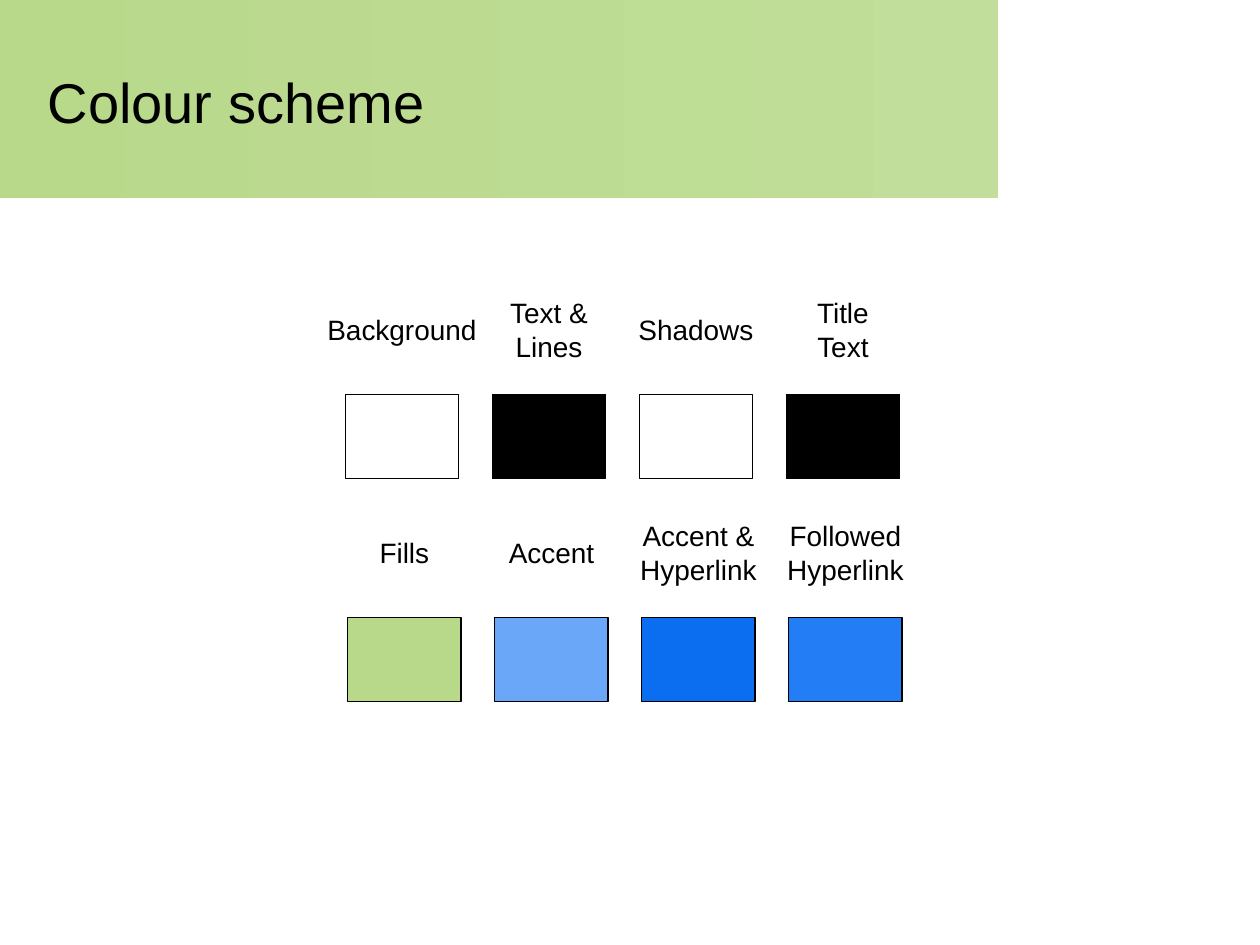
from dataclasses import dataclass

from pptx import Presentation
from pptx import util as u
from pptx.dml.color import RGBColor
from pptx.enum import shapes, text


@dataclass(frozen=True)
class Theme:
    font: str = "Arial"
    ink: str = "000000"
    paper: str = "FFFFFF"
    green: str = "B8D98A"
    pale_green: str = "C1DE9A"
    sky: str = "6BA7F8"
    blue: str = "0B6DEF"
    bright_blue: str = "237DF5"
    title_size: int = 32
    label_size: int = 16
    line_width: float = 0.75


@dataclass(frozen=True)
class Swatch:
    label: str
    color: str
    label_width: float


@dataclass(frozen=True)
class Grid:
    left: float = 3.19
    right: float = 6.69
    columns: int = 4
    top: float = 3.13
    row_pitch: float = 1.77
    row_shift: float = 0.02
    swatch_width: float = 0.9
    swatch_height: float = 0.67
    label_rise: float = 0.51
    line_height: float = 0.27
    label_padding: float = 0.1

    def center(self, col: int, row: int) -> float:
        pitch = (self.right - self.left) / (self.columns - 1)
        return self.left + col * pitch + row * self.row_shift

    def row_top(self, row: int) -> float:
        return self.top + row * self.row_pitch


THEME = Theme()
GRID = Grid()
WIDTH, HEIGHT = 10, 7.5
ROWS = (
    (
        Swatch("Background", THEME.paper, 1.4),
        Swatch("Text &\nLines", THEME.ink, 0.85),
        Swatch("Shadows", THEME.paper, 1.13),
        Swatch("Title\vText", THEME.ink, 0.65),
    ),
    (
        Swatch("Fills", THEME.green, 0.63),
        Swatch("Accent", THEME.sky, 0.9),
        Swatch("Accent &\nHyperlink", THEME.blue, 1.16),
        Swatch("Followed\nHyperlink", THEME.bright_blue, 1.16),
    ),
)


def rgb(color: str) -> RGBColor:
    return RGBColor.from_string(color)


def add_rect(s, left: float, top: float, width: float, height: float):
    box = (u.Inches(v) for v in (left, top, width, height))
    sp = s.shapes.add_shape(shapes.MSO_SHAPE.RECTANGLE, *box)
    sp.shadow.inherit = False
    return sp


def add_text(s, words: str, left: float, top: float, width: float,
             height: float, size: int, frame: dict, align) -> None:
    box = (u.Inches(v) for v in (left, top, width, height))
    tf = s.shapes.add_textbox(*box).text_frame
    for name, value in frame.items():
        setattr(tf, name, value)
    tf.text = words
    for p in tf.paragraphs:
        p.alignment = align
        for r in p.runs:
            for name, value in {"name": THEME.font, "size": u.Pt(size)}.items():
                setattr(r.font, name, value)
            r.font.color.rgb = rgb(THEME.ink)


def add_header(s) -> None:
    sp = add_rect(s, 0, 0, 7.92, 1.57)
    sp.line.fill.background()
    sp.fill.gradient()
    sp.fill.gradient_angle = 0
    for stop, color in zip(sp.fill.gradient_stops, (THEME.green, THEME.pale_green)):
        stop.color.rgb = rgb(color)
    frame = {"word_wrap": True, "vertical_anchor": text.MSO_ANCHOR.MIDDLE}
    add_text(s, "Colour scheme", 0.28, 0.3, 7.48, 1.01,
             THEME.title_size, frame, text.PP_ALIGN.LEFT)


def add_swatch(s, item: Swatch, col: int, row: int) -> None:
    center, top = GRID.center(col, row), GRID.row_top(row)
    sp = add_rect(s, center - GRID.swatch_width / 2, top,
                  GRID.swatch_width, GRID.swatch_height)
    sp.fill.solid()
    sp.fill.fore_color.rgb = rgb(item.color)
    sp.line.color.rgb = rgb(THEME.ink)
    sp.line.width = u.Pt(THEME.line_width)

    height = GRID.label_padding + GRID.line_height * len(item.label.splitlines())
    frame = {"word_wrap": False, "auto_size": text.MSO_AUTO_SIZE.SHAPE_TO_FIT_TEXT}
    add_text(s, item.label, center - item.label_width / 2,
             top - GRID.label_rise - height / 2, item.label_width, height,
             THEME.label_size, frame, text.PP_ALIGN.CENTER)


def main() -> None:
    prs = Presentation()
    prs.slide_width, prs.slide_height = u.Inches(WIDTH), u.Inches(HEIGHT)
    s = prs.slides.add_slide(prs.slide_layouts[6])
    add_header(s)
    for row, items in enumerate(ROWS):
        for col, item in enumerate(items):
            add_swatch(s, item, col, row)
    prs.save("out.pptx")


if __name__ == "__main__":
    main()
